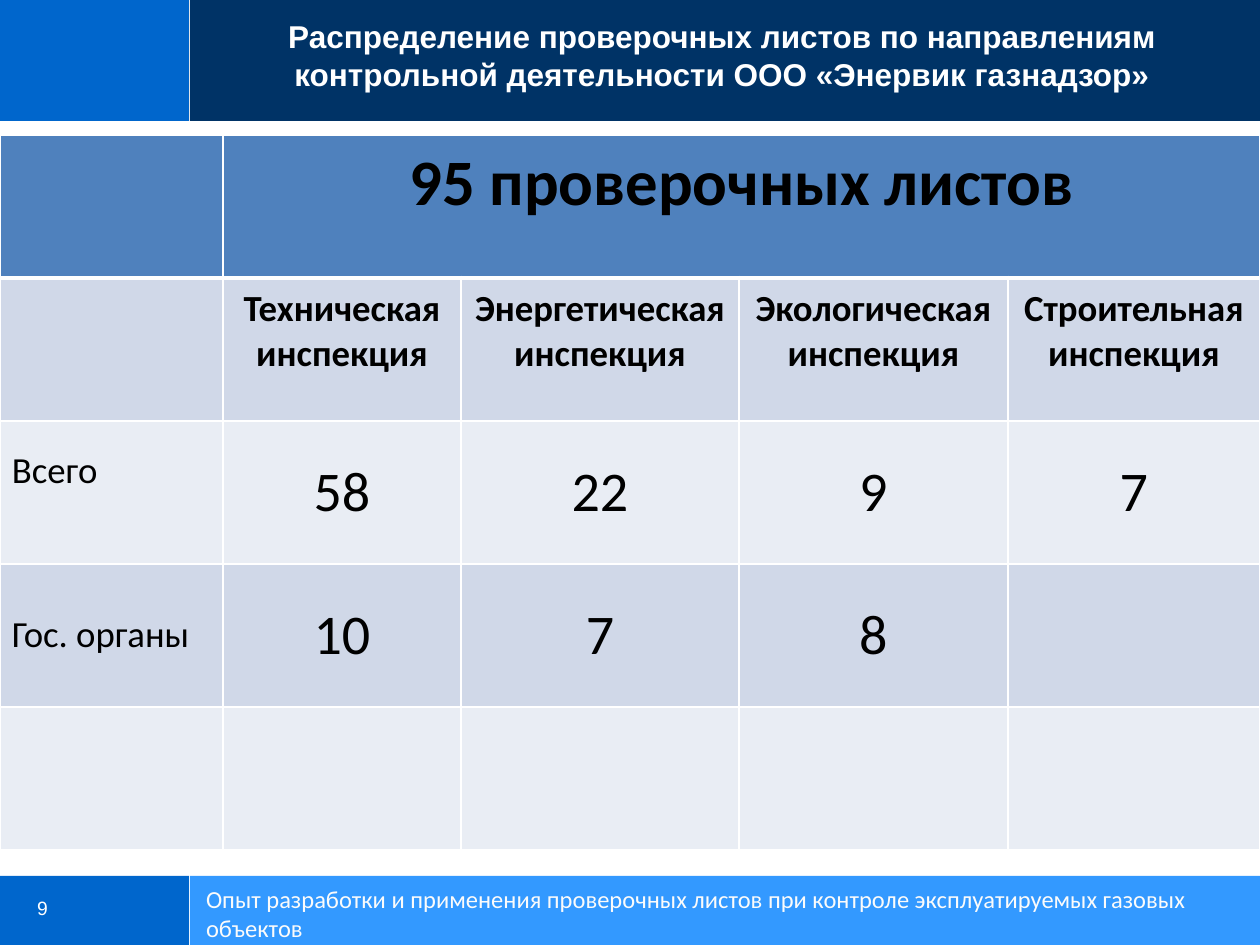
from dataclasses import dataclass

from lxml.etree import SubElement
from pptx import Presentation
from pptx.dml.color import RGBColor
from pptx.enum.shapes import MSO_SHAPE
from pptx.enum.text import MSO_ANCHOR, PP_ALIGN
from pptx.oxml.ns import qn
from pptx.util import Emu, Pt


@dataclass(frozen=True)
class Theme:
    accent: str = "0066CC"
    navy: str = "003366"
    sky: str = "3399FF"
    table_head: str = "4F81BD"
    band_dark: str = "D0D8E8"
    band_light: str = "E9EDF4"
    white: str = "FFFFFF"
    footer_text: str = "FBFBFB"
    black: str = "000000"
    heading_font: str = "Arial"
    body_font: str = "Calibri"
    number_size: int = 11
    footer_size: int = 14
    title_size: int = 18
    label_size: int = 21
    value_size: int = 32
    total_size: int = 37


THEME = Theme()
SCALE = 914400 / 126
COLUMN_WIDTHS = [223, 238, 278, 269, 252]
ROW_HEIGHT = 143
INSPECTIONS = ["Техническая", "Энергетическая", "Экологическая", "Строительная"]
ROWS = [
    ["", "95 проверочных листов", "", "", ""],
    ["", *[f"{name} инспекция" for name in INSPECTIONS]],
    ["Всего", "58", "22", "9", "7"],
    ["Гос. органы", "10", "7", "8", ""],
    [""] * 5,
]


def px(length):
    return Emu(round(length * SCALE))


def write_text(frame, text, *, size, color=THEME.black, font=THEME.body_font,
               bold=False, align=PP_ALIGN.LEFT):
    paragraph = frame.paragraphs[0]
    paragraph.alignment = align
    run = paragraph.add_run()
    run.text = text
    run.font.name = font
    run.font.size = Pt(size)
    run.font.bold = bold
    run.font.color.rgb = RGBColor.from_string(color)


def set_margins(target, horizontal, vertical):
    target.margin_left = target.margin_right = px(horizontal)
    target.margin_top = target.margin_bottom = px(vertical)


def add_panel(slide, left, top, width, height, color):
    shape = slide.shapes.add_shape(
        MSO_SHAPE.RECTANGLE, px(left), px(top), px(width), px(height))
    shape.shadow.inherit = False
    shape.fill.solid()
    shape.fill.fore_color.rgb = RGBColor.from_string(color)
    shape.line.fill.background()
    return shape


def add_text_box(slide, left, top, width, height, text, *, margins=(0, 0),
                 anchor=MSO_ANCHOR.TOP, **style):
    frame = slide.shapes.add_textbox(
        px(left), px(top), px(width), px(height)).text_frame
    frame.word_wrap = True
    frame.vertical_anchor = anchor
    set_margins(frame, *margins)
    write_text(frame, text, **style)


def set_borders(cell, **widths):
    properties = cell._tc.get_or_add_tcPr()
    for side in "LRTB":
        line = SubElement(properties, qn(f"a:ln{side}"),
                          w=str(Pt(widths.get(side, 1))))
        fill = SubElement(line, qn("a:solidFill"))
        SubElement(fill, qn("a:srgbClr"), val=THEME.white)


def cell_style(row, column):
    if row == 0:
        return {"size": THEME.total_size, "bold": True, "align": PP_ALIGN.CENTER}
    if row == 1:
        return {"size": THEME.label_size, "bold": True, "align": PP_ALIGN.CENTER}
    if column == 0:
        return {"size": THEME.label_size}
    return {"size": THEME.value_size, "align": PP_ALIGN.CENTER}


def format_cell(cell, text, row, column):
    edges = {0: {"B": 3}, 1: {"T": 3}}
    set_borders(cell, **edges.get(row, {}))
    band = THEME.band_dark if row % 2 else THEME.band_light
    cell.fill.solid()
    cell.fill.fore_color.rgb = RGBColor.from_string(
        band if row else THEME.table_head)
    set_margins(cell, 12, 9)
    cell.vertical_anchor = MSO_ANCHOR.MIDDLE if row > 1 else MSO_ANCHOR.TOP
    if text:
        write_text(cell.text_frame, text, **cell_style(row, column))


def add_inspection_table(slide):
    table = slide.shapes.add_table(
        len(ROWS), len(COLUMN_WIDTHS), px(0), px(135),
        px(sum(COLUMN_WIDTHS)), px(ROW_HEIGHT * len(ROWS))).table
    table.first_row = False
    table.horz_banding = False
    for column, width in zip(table.columns, COLUMN_WIDTHS):
        column.width = px(width)
    for row in table.rows:
        row.height = px(ROW_HEIGHT)
    for row, texts in enumerate(ROWS):
        for column, text in enumerate(texts):
            format_cell(table.cell(row, column), text, row, column)
    table.cell(0, 1).merge(table.cell(0, 4))
    table.cell(2, 0).margin_bottom = px(53)


def add_footer(slide):
    footer = add_panel(slide, 194, 878, 1076, 67, THEME.sky)
    frame = footer.text_frame
    frame.word_wrap = True
    frame.vertical_anchor = MSO_ANCHOR.TOP
    set_margins(frame, 12, 6)
    write_text(
        frame,
        "Опыт разработки и применения проверочных листов при контроле "
        "эксплуатируемых газовых объектов",
        size=THEME.footer_size, color=THEME.footer_text)


def main():
    presentation = Presentation()
    presentation.slide_width = px(1260)
    presentation.slide_height = px(945)
    slide = presentation.slides.add_slide(presentation.slide_layouts[6])

    for top, height, color in [(0, 121, THEME.navy), (876, 69, THEME.sky)]:
        add_panel(slide, 0, top, 189, height, THEME.accent)
        add_panel(slide, 190, top, 1070, height, color)

    add_text_box(slide, 37, 896, 67, 24, "9", size=THEME.number_size,
                 color=THEME.white, font=THEME.heading_font)
    add_text_box(
        slide, 184, -6, 1076, 121,
        "Распределение проверочных листов по направлениям контрольной "
        "деятельности ООО «Энервик газнадзор»",
        margins=(14, 8), anchor=MSO_ANCHOR.MIDDLE, size=THEME.title_size,
        color=THEME.white, font=THEME.heading_font, bold=True,
        align=PP_ALIGN.CENTER)
    add_inspection_table(slide)
    add_footer(slide)
    presentation.save("out.pptx")


if __name__ == "__main__":
    main()
